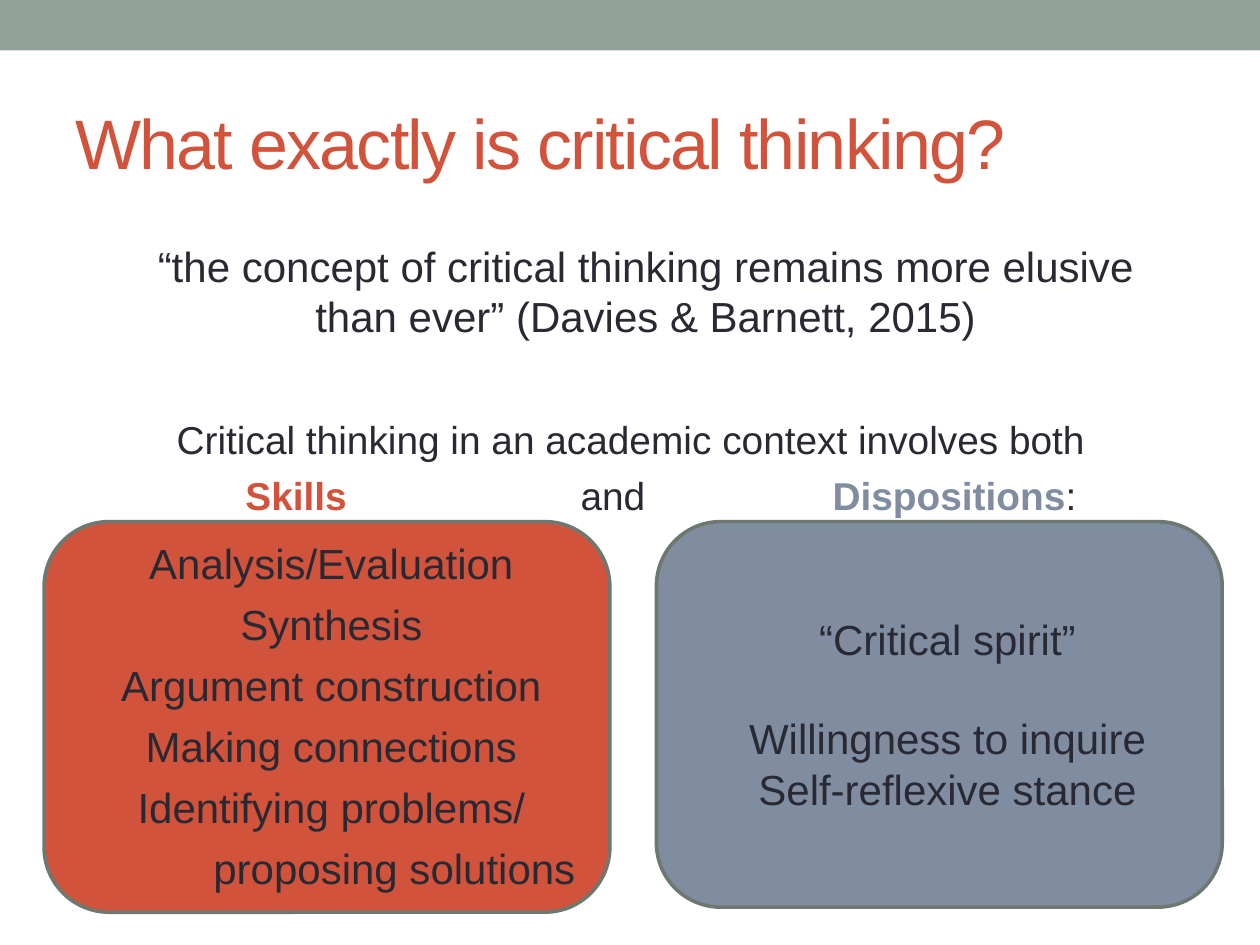
"""Builds a slide that splits critical thinking into skills and dispositions."""
from lxml.etree import SubElement
from pptx import Presentation
from pptx.dml.color import RGBColor
from pptx.enum.shapes import MSO_SHAPE as Shape
from pptx.enum.text import MSO_ANCHOR as Anchor, PP_ALIGN as Align
from pptx.oxml.ns import qn
from pptx.util import Inches, Pt

WIDTH, HEIGHT = 10, 7.5
FONT = "Arial"
COLORS = {"band": "93A299", "skills": "D2533C", "dispositions": "808DA0",
          "outline": "6D7871", "ink": "292934"}

TITLE = "What exactly is critical thinking?"
QUOTE = ("“the concept of critical thinking remains more elusive than ever” "
         "(Davies & Barnett, 2015)")
INTRO = "Critical thinking in an academic context involves both"
HEADINGS = [("\t", "ink", False), ("Skills", "skills", True), ("\tand", "ink", False),
            ("\t", "ink", False), ("Dispositions", "dispositions", True), (":", "ink", False)]
HEADING_STOPS = [1.34, 4, 6]
SKILLS = ["Analysis/Evaluation", "Synthesis", "Argument construction",
          "Making connections", "Identifying problems/", "proposing solutions"]
DISPOSITIONS = ["“Critical spirit”", "Willingness to inquire", "Self-reflexive stance"]

PANEL_TOP, PANEL_WIDTH = 4.14, 4.49
PANELS = [("dispositions", 5.21, 3.06), ("skills", 0.35, 3.1)]


def add_panel(slide, preset, box, fill, outline=None):
    panel = slide.shapes.add_shape(preset, *map(Inches, box))
    panel.shadow.inherit = False
    panel.fill.solid()
    panel.fill.fore_color.rgb = RGBColor.from_string(COLORS[fill])
    if outline:
        panel.line.color.rgb = RGBColor.from_string(COLORS[outline])
        panel.line.width = Pt(2.08)
    else:
        panel.line.fill.background()


def add_text(slide, box, lines, size, align=Align.CENTER, anchor=Anchor.TOP, gaps=()):
    frame = slide.shapes.add_textbox(*map(Inches, box)).text_frame
    frame.word_wrap = True
    frame.vertical_anchor = anchor
    for index, line in enumerate(lines):
        paragraph = frame.add_paragraph() if index else frame.paragraphs[0]
        paragraph.alignment = align
        paragraph.space_before = Pt(gaps[index] if gaps else 0)
        for words, color, bold in line:
            run = paragraph.add_run()
            run.text = words
            run.font.name, run.font.size, run.font.bold = FONT, Pt(size), bold
            run.font.color.rgb = RGBColor.from_string(COLORS[color])
    return frame.paragraphs


def plain(lines, color="ink"):
    return [[(line, color, False)] for line in lines]


def set_tab_stops(paragraph, stops):
    tabs = SubElement(paragraph._p.get_or_add_pPr(), qn("a:tabLst"))
    for stop in stops:
        SubElement(tabs, qn("a:tab"), pos=str(Inches(stop)), algn="l")


def main():
    deck = Presentation()
    deck.slide_width, deck.slide_height = Inches(WIDTH), Inches(HEIGHT)
    slide = deck.slides.add_slide(deck.slide_layouts[6])

    add_panel(slide, Shape.RECTANGLE, (0, 0, WIDTH, 0.4), "band")
    for topic, left, height in PANELS:
        add_panel(slide, Shape.ROUNDED_RECTANGLE,
                  (left, PANEL_TOP, PANEL_WIDTH, height), topic, "outline")

    title = add_text(slide, (0.5, 0.58, 9, 1.08), plain([TITLE], "skills"), 40,
                     Align.LEFT, Anchor.MIDDLE)
    title[0].runs[0].font._element.set("spc", "-100")

    add_text(slide, (0.91, 1.86, 8.43, 0.91), plain([QUOTE]), 24)

    intro = add_text(slide, (0.51, 3.25, 9, 0.9), plain([INTRO]) + [HEADINGS], 22.2,
                     gaps=[0, 5.3])
    intro[1].alignment = Align.LEFT
    set_tab_stops(intro[1], HEADING_STOPS)

    add_text(slide, (5.71, 4.82, 3.62, 1.72), plain(DISPOSITIONS), 24, gaps=[0, 28, 0])

    skills = add_text(slide, (0.36, 4.22, 4.54, 2.93), plain(SKILLS), 24,
                      gaps=[0] + [6] * (len(SKILLS) - 1))
    skills[-1]._p.get_or_add_pPr().set("marL", str(Inches(1)))

    deck.save("out.pptx")


if __name__ == "__main__":
    main()
